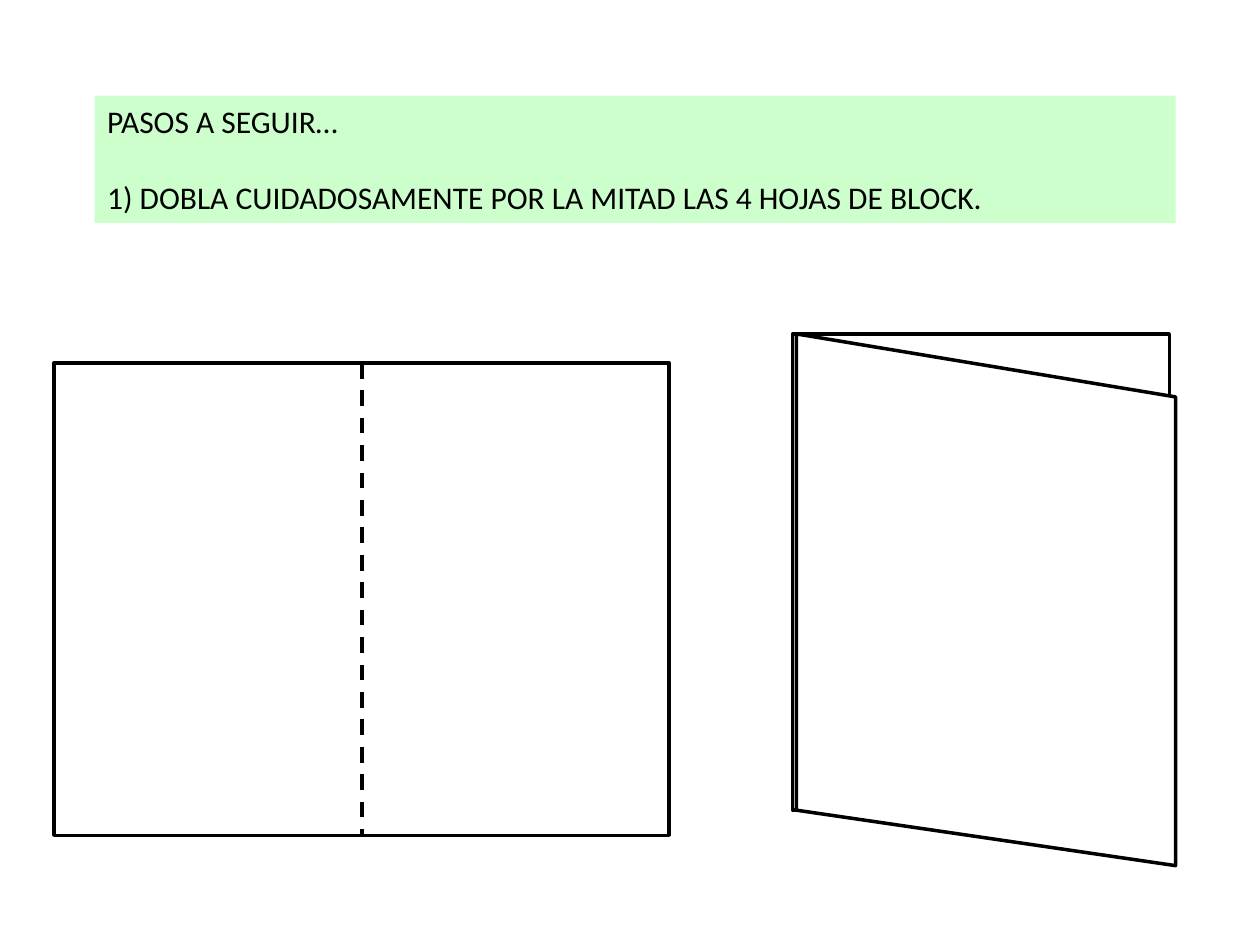
from dataclasses import dataclass

from lxml import etree
from pptx import Presentation
from pptx import util as u
from pptx.dml.color import RGBColor
from pptx.enum import dml, shapes, text
from pptx.oxml import ns

BLACK, WHITE, GREEN = "000000", "FFFFFF", "CCFFCC"
OUTLINE = 2


@dataclass
class Sheet:
    left: float
    top: float
    width: float
    height: float


def color(value: str) -> RGBColor:
    return RGBColor.from_string(value)


def style_paper(shape) -> None:
    shape.shadow.inherit = False
    shape.fill.solid()
    shape.fill.fore_color.rgb = color(WHITE)
    shape.line.color.rgb = color(BLACK)
    shape.line.width = u.Pt(OUTLINE)


def draw_sheet(page, sheet: Sheet) -> None:
    lengths = (sheet.left, sheet.top, sheet.width, sheet.height)
    style_paper(page.shapes.add_shape(
        shapes.MSO_SHAPE.RECTANGLE, *map(u.Inches, lengths)))


def draw_flap(page, corners: list[tuple[float, float]]) -> None:
    points = [(u.Inches(x), u.Inches(y)) for x, y in corners]
    builder = page.shapes.build_freeform(*points[0])
    builder.add_line_segments(points[1:], close=True)
    style_paper(builder.convert_to_shape())


def draw_fold(page, sheet: Sheet) -> None:
    middle = u.Inches(sheet.left + sheet.width / 2)
    fold = page.shapes.add_connector(
        shapes.MSO_CONNECTOR.STRAIGHT,
        middle, u.Inches(sheet.top),
        middle, u.Inches(sheet.top + sheet.height))
    fold.line.color.rgb = color(BLACK)
    fold.line.width = u.Pt(2.25)
    fold.line.dash_style = dml.MSO_LINE.DASH
    etree.SubElement(fold._element.spPr, ns.qn("a:effectLst"))


def write_instructions(page, lines: list[str]) -> None:
    box = page.shapes.title
    box.left, box.top = u.Inches(0.75), u.Inches(0.76)
    box.width, box.height = u.Inches(8.58), u.Inches(1.01)
    box.fill.solid()
    box.fill.fore_color.rgb = color(GREEN)
    frame = box.text_frame
    frame.word_wrap = True
    frame.auto_size = text.MSO_AUTO_SIZE.NONE
    frame.vertical_anchor = text.MSO_ANCHOR.TOP
    for index, line in enumerate(lines):
        para = frame.add_paragraph() if index else frame.paragraphs[0]
        para.alignment = text.PP_ALIGN.LEFT
        para.space_before = u.Pt(22 if index else 0)
        span = para.add_run()
        span.text = line
        span.font.name = "Calibri"
        span.font.size = u.Pt(18)
        span.font.color.rgb = color(BLACK)


def main() -> None:
    deck = Presentation()
    deck.slide_width, deck.slide_height = u.Inches(10), u.Inches(7.5)
    page = deck.slides.add_slide(deck.slide_layouts.get_by_name("Title Only"))

    open_sheet = Sheet(0.43, 2.88, 4.88, 3.75)
    back_half = Sheet(6.29, 2.65, 2.99, 3.78)
    write_instructions(page, [
        "PASOS A SEGUIR…",
        "1) DOBLA CUIDADOSAMENTE POR LA MITAD LAS 4 HOJAS DE BLOCK.",
    ])
    draw_sheet(page, back_half)
    draw_flap(page, [(6.32, 6.43), (9.33, 6.87), (9.33, 3.15), (6.32, 2.65)])
    draw_sheet(page, open_sheet)
    draw_fold(page, open_sheet)
    deck.save("out.pptx")


if __name__ == "__main__":
    main()
